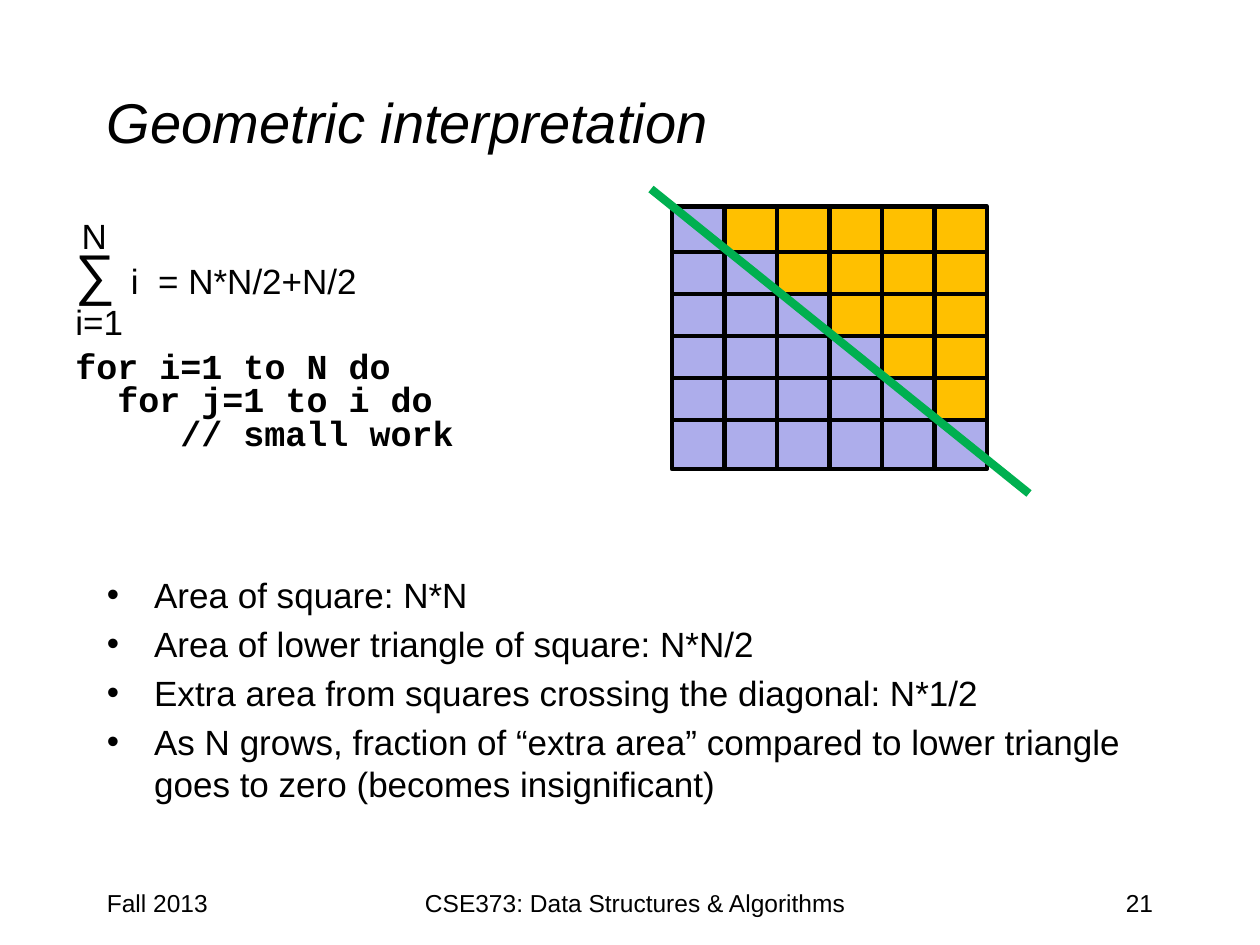
from lxml import etree
from pptx import Presentation
from pptx import util as u
from pptx.dml.color import RGBColor
from pptx.enum import shapes, text
from pptx.oxml.ns import qn

Pt = u.Pt
ALIGN = text.PP_ALIGN
BLACK, LILAC, AMBER, GREEN = "000000", "ADADEB", "FFC000", "00B050"
BASE = {"name": "Arial", "size": Pt(20)}


def color(hex_value):
    return RGBColor.from_string(hex_value)


def apply(obj, values):
    for name, value in values.items():
        setattr(obj, name, value)


def add_box(s, box, **fmt):
    tf = s.shapes.add_textbox(*map(Pt, box)).text_frame
    apply(tf, {"word_wrap": True, **fmt})
    return tf


def add_par(tf, runs, first=False, **fmt):
    """Add a paragraph from (text, font values) pairs."""
    p = tf.paragraphs[0] if first else tf.add_paragraph()
    apply(p, fmt)
    for words, font in runs:
        r = p.add_run()
        r.text = words
        apply(r.font, {**BASE, **font})
        r.font.color.rgb = color(BLACK)
    return p


def set_indent(p, left, hanging=0, bullet=None):
    pPr = p._p.get_or_add_pPr()
    pPr.set("marL", str(Pt(left)))
    pPr.set("indent", str(Pt(-hanging)))
    if bullet:
        etree.SubElement(pPr, qn("a:buFont")).set("typeface", "Arial")
        etree.SubElement(pPr, qn("a:buChar")).set("char", bullet)


def add_title(s, box):
    tf = add_box(s, box, vertical_anchor=text.MSO_ANCHOR.MIDDLE)
    add_par(tf, [("Geometric interpretation", {"size": Pt(32), "italic": True})], True)


def add_sum_and_code(s, box):
    x, y, _, _ = box
    # Sum: the top margin leaves room for the upper limit
    tf = add_box(s, box, margin_top=Pt(34.5))
    add_par(tf, [("∑ ", {"size": Pt(32)}), ("i  = N*N/2+N/2", {})], True)
    # Code, indented by whole characters of 12 pt
    code = [("for i=1 to N do", 0, 31), ("for j=1 to i do", 2, 4),
            ("// small work", 5, 4)]
    for words, chars, gap in code:
        p = add_par(tf, [(words, {"name": "Courier New", "bold": True})],
                    space_before=Pt(gap), line_spacing=Pt(15))
        set_indent(p, 12 * chars)
    # Limits of the sum
    limits = [("N", 3.6, 16.8, 29.5), ("i=1", 0, 66, 42)]
    for words, dx, dy, width in limits:
        tf = add_box(s, (x + dx, y + dy, width, 31.5), word_wrap=False)
        add_par(tf, [(words, {})], True)


def add_grid(s, box, n=6):
    x, y, w, h = box
    cell_w, cell_h, step = w / n, 28, 24
    for col in range(n):
        for row in range(n):
            # The top row sits a little higher than the even step
            top = y if row == 0 else y + h - cell_h - step * (n - 1 - row)
            sp = s.shapes.add_shape(shapes.MSO_SHAPE.RECTANGLE, Pt(x + col * cell_w),
                                    Pt(top), Pt(cell_w), Pt(cell_h))
            sp.shadow.inherit = False
            sp.fill.solid()
            sp.fill.fore_color.rgb = color(LILAC if col <= row else AMBER)
            sp.line.color.rgb = color(BLACK)
            sp.line.width = Pt(2.5)
    # Diagonal, running past both corners
    line = s.shapes.add_connector(shapes.MSO_CONNECTOR.STRAIGHT, Pt(x - 12), Pt(y - 10),
                                  Pt(x + w + 24), Pt(y + h + 14))
    line.line.color.rgb = color(GREEN)
    line.line.width = Pt(4.75)
    etree.SubElement(line._element.spPr, qn("a:effectLst"))


def add_bullets(s, box):
    tf = add_box(s, box)
    items = [
        "Area of square: N*N",
        "Area of lower triangle of square: N*N/2",
        "Extra area from squares crossing the diagonal: N*1/2",
        "As N grows, fraction of “extra area” compared to lower triangle "
        "goes to zero (becomes insignificant)",
    ]
    for i, words in enumerate(items):
        p = add_par(tf, [(words, {})], i == 0, space_before=Pt(4), level=1)
        set_indent(p, 27, 27, "•")


def add_footer(s, box):
    x, y, w, h = box
    parts = [("Fall 2013", x, 150, ALIGN.LEFT),
             ("CSE373: Data Structures & Algorithms", 228, 270, ALIGN.CENTER),
             ("21", x + w - 150, 150, ALIGN.RIGHT)]
    for words, left, width, align in parts:
        tf = add_box(s, (left, y, width, h))
        add_par(tf, [(words, {"size": Pt(14)})], True, alignment=align)


def main():
    prs = Presentation()
    apply(prs, {"slide_width": Pt(720), "slide_height": Pt(540)})
    s = prs.slides.add_slide(prs.slide_layouts[6])
    add_title(s, (54, 24, 612, 90))
    add_sum_and_code(s, (36, 102, 252, 162))
    add_grid(s, (384, 118, 180, 150))
    add_bullets(s, (54, 324, 612, 168))
    add_footer(s, (54, 504, 612, 36))
    prs.save("out.pptx")


if __name__ == "__main__":
    main()
